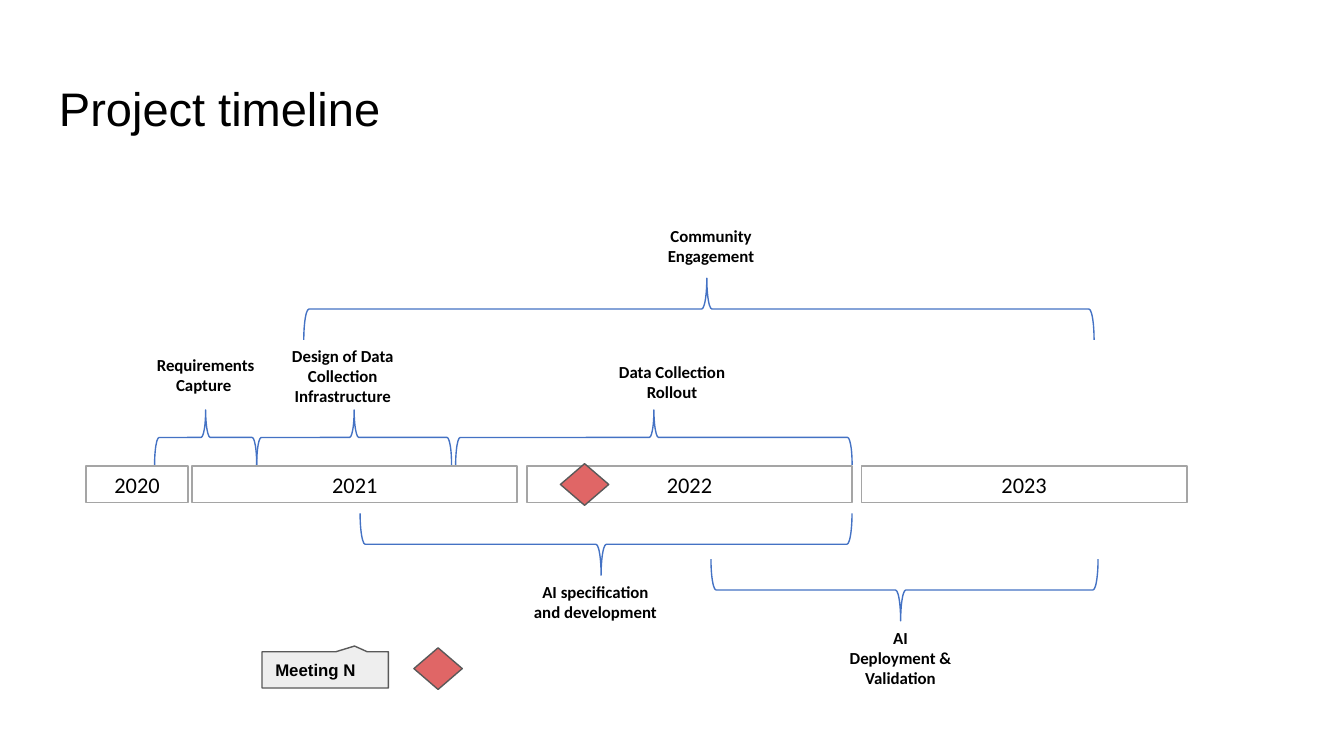
from pptx import Presentation
from pptx.dml.color import RGBColor
from pptx.enum.shapes import MSO_SHAPE
from pptx.enum.text import MSO_ANCHOR, PP_ALIGN
from pptx.util import Inches, Pt

COLORS = {"ink": "000000", "white": "FFFFFF", "frame": "A5A5A5",
          "brace": "4472C4", "mark": "E06666", "edge": "595959",
          "note": "EEEEEE"}
LABEL_W = 1.2

# Year, left and width, from the left of the bar
YEARS = [("2020", 0, 0.76), ("2021", 0.79, 2.42),
         ("2022", 3.28, 2.42), ("2023", 5.77, 2.42)]

# Brace box, pointing up, position of the tip, label place, label lines
PHASES = [
    ((0.51, 1.42, 0.76, 0.41), True, 0.5, (0.29, 0.96, 0.4),
     ["Requirements Capture "]),
    ((1.27, 1.42, 1.45, 0.41), True, 0.5, (1.31, 0.89, 0.56),
     ["Design of Data Collection Infrastructure"]),
    ((2.75, 1.42, 2.95, 0.41), True, 0.5, (3.76, 1.01, 0.4),
     ["Data Collection Rollout"]),
    ((4.65, 2.53, 2.88, 0.46), False, 0.49, (5.46, 2.99, 0.56),
     ["AI", "Deployment & Validation"]),
    ((2.04, 2.19, 3.66, 0.46), False, 0.49, (3.19, 2.65, 0.4),
     ["AI specification and development"]),
    ((1.62, 0.44, 5.88, 0.46), True, 0.49, (4.05, 0, 0.4),
     ["Community Engagement"]),
]


def color(name):
    return RGBColor.from_string(COLORS[name])


def write(shape, lines, size, font="Calibri", bold=False,
          align=PP_ALIGN.CENTER, anchor=MSO_ANCHOR.TOP, inset=0.05):
    frame = shape.text_frame
    frame.word_wrap = True
    frame.vertical_anchor = anchor
    frame.margin_left = frame.margin_right = Inches(0.1)
    frame.margin_top = frame.margin_bottom = Inches(inset)
    for i, line in enumerate(lines):
        para = frame.add_paragraph() if i else frame.paragraphs[0]
        para.alignment = align
        run = para.add_run()
        run.text = line
        run.font.size = Pt(size)
        run.font.name = font
        run.font.bold = bold
        run.font.color.rgb = color("ink")


def add_text(slide, box, lines, size, **style):
    shape = slide.shapes.add_textbox(*map(Inches, box))
    write(shape, lines, size, **style)


def add_form(slide, kind, box, fill, line, width=0.75):
    shape = slide.shapes.add_shape(kind, *map(Inches, box))
    shape.shadow.inherit = False
    if fill:
        shape.fill.solid()
        shape.fill.fore_color.rgb = color(fill)
    else:
        shape.fill.background()
    shape.line.color.rgb = color(line)
    shape.line.width = Pt(width)
    return shape


def add_brace(slide, box, up, tip):
    # The brace is turned a quarter, so its sides swap around the centre
    x, y, w, h = box
    turned = (x + (w - h) / 2, y + (h - w) / 2, h, w)
    shape = add_form(slide, MSO_SHAPE.LEFT_BRACE, turned, None, "brace")
    shape.rotation = 90 if up else 270
    shape.adjustments[0] = 0.083
    shape.adjustments[1] = tip


def add_mark(slide, x, y):
    add_form(slide, MSO_SHAPE.FLOWCHART_DECISION, (x, y, 0.36, 0.31),
             "mark", "edge")


def add_title(slide, box):
    add_text(slide, box, ["Project timeline"], 25.2, font="Arial",
             align=PP_ALIGN.LEFT, anchor=MSO_ANCHOR.MIDDLE, inset=0.1)


def add_years(slide, box):
    left, top, _, height = box
    for year, x, w in YEARS:
        cell = add_form(slide, MSO_SHAPE.RECTANGLE,
                        (left + x, top, w, height), "white", "frame", 1)
        write(cell, [year], 12, anchor=MSO_ANCHOR.MIDDLE)
    # Meeting within 2022
    add_mark(slide, left + 3.53, top - 0.02)


def add_phases(slide, box):
    left, top = box[:2]
    for (x, y, w, h), up, tip, (tx, ty, th), lines in PHASES:
        add_brace(slide, (left + x, top + y, w, h), up, tip)
        add_text(slide, (left + tx, top + ty, LABEL_W, th), lines, 9,
                 bold=True)


def add_legend(slide, box):
    left, top = box[:2]
    note = add_form(slide, MSO_SHAPE.RECTANGULAR_CALLOUT,
                    (left, top + 0.03, 0.94, 0.27), "note", "edge")
    note.adjustments[0] = 0.232
    note.adjustments[1] = -0.658
    write(note, ["Meeting N"], 9, font="Arial", bold=True,
          align=PP_ALIGN.LEFT, anchor=MSO_ANCHOR.MIDDLE, inset=0.1)
    add_mark(slide, left + 1.13, top)


def main():
    deck = Presentation()
    # Widescreen, 16 to 9
    deck.slide_width = Inches(10)
    deck.slide_height = deck.slide_width * 9 // 16
    slide = deck.slides.add_slide(deck.slide_layouts[6])
    add_title(slide, (0.34, 0.49, 9.32, 0.63))
    add_years(slide, (0.64, 3.47, 8.19, 0.27))
    add_phases(slide, (0.64, 1.63, 8.19, 3.55))
    add_legend(slide, (1.95, 4.82, 1.49, 0.31))
    deck.save("out.pptx")


if __name__ == "__main__":
    main()
